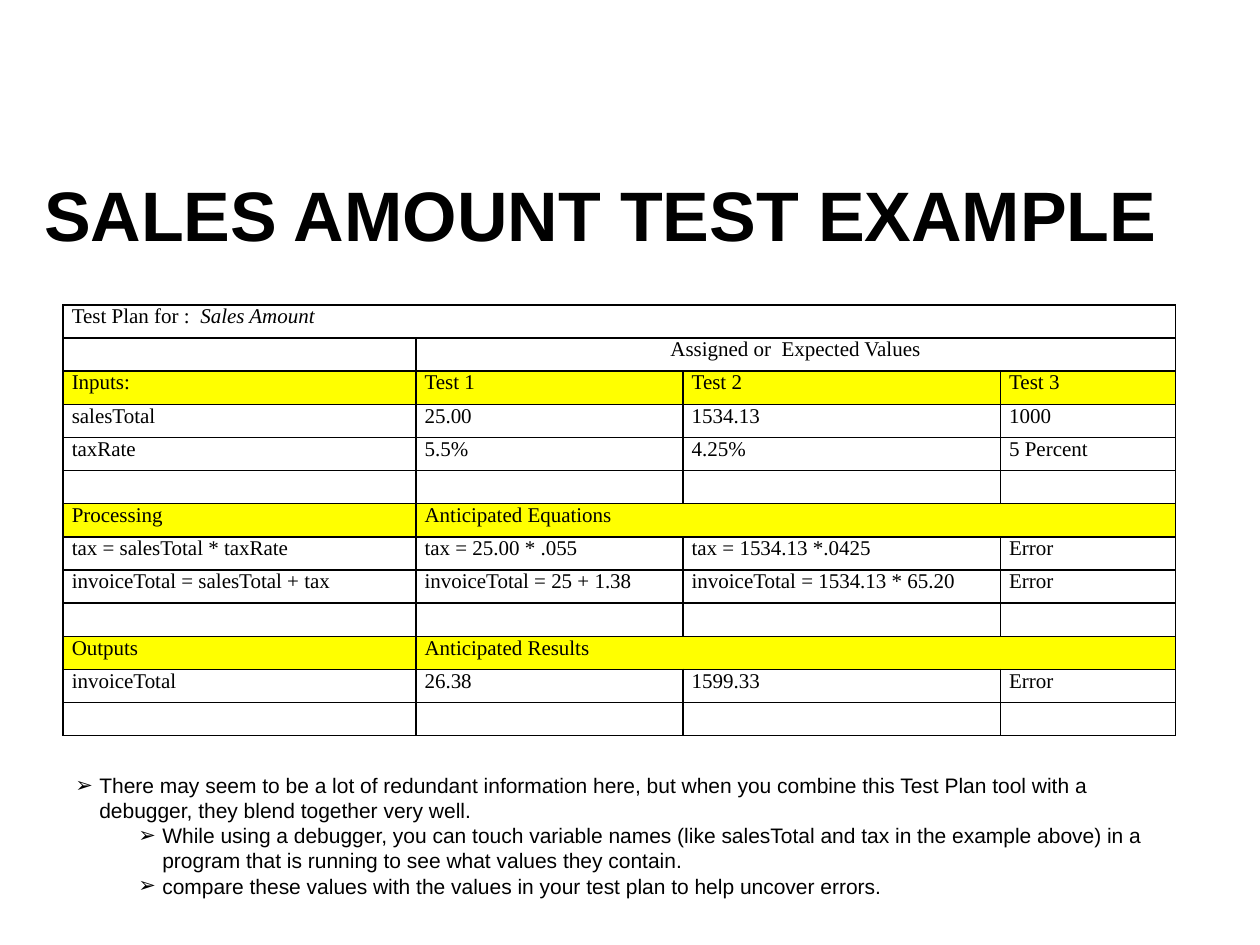
from lxml.etree import SubElement
from pptx import Presentation
from pptx.dml.color import RGBColor
from pptx.enum.text import MSO_ANCHOR, PP_ALIGN
from pptx.oxml.ns import qn
from pptx.util import Inches, Pt

HUES = {"ink": "000000", "band": "FFFF00"}
TITLE = "SALES AMOUNT TEST EXAMPLE"
ROWS = [
    ["Test Plan for :  |Sales Amount"],
    ["", "Assigned or  Expected Values"],
    ["Inputs:", "Test 1", "Test 2", "Test 3"],
    ["salesTotal", "25.00", "1534.13", "1000"],
    ["taxRate", "5.5%", "4.25%", "5 Percent"],
    ["", "", "", ""],
    ["Processing", "Anticipated Equations"],
    ["tax = salesTotal * taxRate", "tax = 25.00 * .055", "tax = 1534.13 *.0425", "Error"],
    ["invoiceTotal = salesTotal + tax", "invoiceTotal = 25 + 1.38",
     "invoiceTotal = 1534.13 * 65.20", "Error"],
    ["", "", "", ""],
    ["Outputs", "Anticipated Results"],
    ["invoiceTotal", "26.38", "1599.33", "Error"],
    ["", "", "", ""],
]
BANDS = {"Inputs:", "Processing", "Outputs"}
COLS = [2.8, 2.12, 2.52, 1.39]
HIGH = 3.42
NOTES = [
    (0, "There may seem to be a lot of redundant information here, but when you combine "
        "this Test Plan tool with a debugger, they blend together very well."),
    (1, "While using a debugger, you can touch variable names (like salesTotal and tax in "
        "the example above) in a program that is running to see what values they contain."),
    (1, "compare these values with the values in your test plan to help uncover errors."),
]


def style(font, face, size, bold=False):
    font.name, font.size, font.bold = face, Pt(size), bold
    font.color.rgb = RGBColor.from_string(HUES["ink"])


def edge(cell):
    props = cell._tc.get_or_add_tcPr()
    for i, side in enumerate(("lnL", "lnR", "lnT", "lnB")):
        line = props.makeelement(qn("a:" + side), {"w": str(Pt(1))})
        fill = SubElement(line, qn("a:solidFill"))
        SubElement(fill, qn("a:srgbClr"), val=HUES["ink"])
        props.insert(i, line)


def add_title(slide):
    title = slide.shapes.title
    title.left, title.top = Inches(0.25), Inches(1.25)
    title.width, title.height = Inches(9.42), Inches(1.08)
    frame = title.text_frame
    frame.text = TITLE
    frame.vertical_anchor = MSO_ANCHOR.TOP
    frame.margin_top = Inches(0.11)
    para = frame.paragraphs[0]
    para.alignment = PP_ALIGN.LEFT
    style(para.runs[0].font, "Arial", 40, True)


def add_plan(slide):
    frame = slide.shapes.add_table(len(ROWS), len(COLS), Inches(0.5), Inches(2.42),
                                   Inches(sum(COLS)), Inches(HIGH))
    table = frame.table
    table.first_row = table.horz_banding = False
    for col, wide in zip(table.columns, COLS):
        col.width = Inches(wide)
    for r, row in enumerate(ROWS):
        table.rows[r].height = Inches(HIGH / len(ROWS))
        last = len(row) - 1
        if last < len(COLS) - 1:
            table.cell(r, last).merge(table.cell(r, len(COLS) - 1))
        for c in range(len(COLS)):
            cell = table.cell(r, c)
            cell.margin_left = cell.margin_right = Inches(0.07)
            cell.margin_top = cell.margin_bottom = 0
            if row[0] in BANDS:
                cell.fill.solid()
                cell.fill.fore_color.rgb = RGBColor.from_string(HUES["band"])
            else:
                cell.fill.background()
            edge(cell)
            para = cell.text_frame.paragraphs[0]
            style(para.font, "Times New Roman", 12)
            if c <= last and row[c]:
                for i, part in enumerate(row[c].split("|")):
                    run = para.add_run()
                    run.text = part
                    style(run.font, "Times New Roman", 12)
                    run.font.italic = i == 1
    table.cell(1, 1).text_frame.paragraphs[0].alignment = PP_ALIGN.CENTER


def add_notes(slide):
    box = slide.shapes.add_textbox(Inches(0.5), Inches(6.08), Inches(8.67), Inches(1.31))
    frame = box.text_frame
    frame.word_wrap = True
    frame.text = "\n".join(text for _, text in NOTES)
    for para, (level, _) in zip(frame.paragraphs, NOTES):
        para.level = level
        props = para._p.get_or_add_pPr()
        props.set("marL", str(Inches(0.19 + 0.5 * level)))
        props.set("indent", str(Inches(-0.19)))
        SubElement(props, qn("a:buFont"), typeface="Arial")
        SubElement(props, qn("a:buChar"), char="➢")
        style(para.runs[0].font, "Arial", 12)


def main():
    """Build the sales amount test plan slide."""
    deck = Presentation()
    deck.slide_width, deck.slide_height = Inches(10), Inches(7.5)
    slide = deck.slides.add_slide(deck.slide_layouts[5])
    add_title(slide)
    add_plan(slide)
    add_notes(slide)
    deck.save("out.pptx")


if __name__ == "__main__":
    main()
